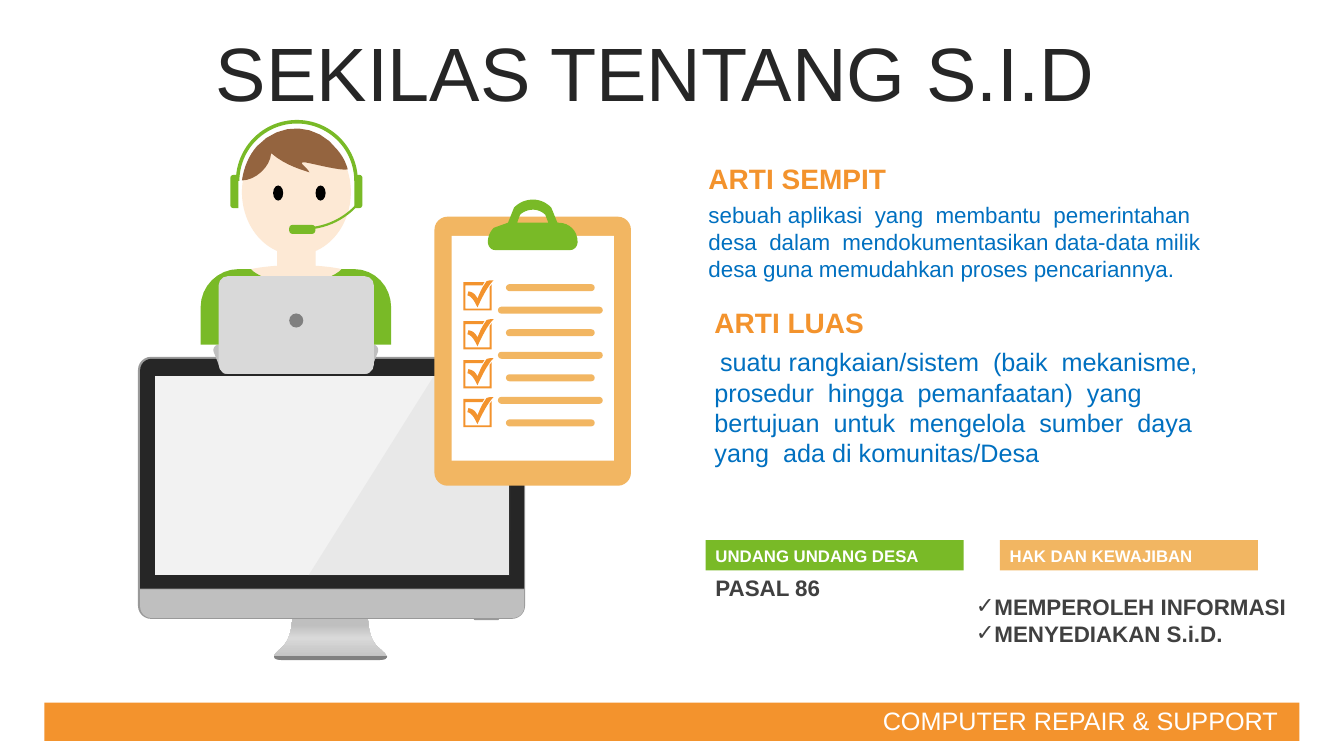
from dataclasses import dataclass

import lxml.etree
import pptx
import pptx.dml.color
import pptx.enum.dml
import pptx.enum.shapes
import pptx.enum.text
import pptx.oxml.ns
import pptx.util

Pt = pptx.util.Pt
qn = pptx.oxml.ns.qn
MSO = pptx.enum.shapes.MSO_SHAPE
ANCHOR = pptx.enum.text.MSO_ANCHOR
FONT = "Arial"
COLORS = {
    "orange": "F3932D", "sand": "F2B662", "green": "79BA27", "white": "FFFFFF",
    "ink": "262626", "text": "404040", "blue": "0070C0", "skin": "FDE9D5",
    "hair": "94643F", "black": "000000", "edge": "999999", "silver": "BFBFBF",
    "light": "D9D9D9", "grey": "808080", "screen": "F2F2F2",
}
Contour = list[tuple[float, ...]]
Box = tuple[float, float, float, float]


@dataclass(frozen=True)
class Preset:
    kind: int
    box: Box
    color: str
    adj: tuple[float, ...] = ()
    rotation: float = 0


@dataclass(frozen=True)
class Outline:
    contours: list[Contour]
    color: str


@dataclass(frozen=True)
class TextBlock:
    text: str
    box: Box
    size: float
    color: str
    bold: bool = False
    anchor: int = ANCHOR.TOP
    spacing: float = 1.0
    before: float = 0
    indent: float = 0


def rgb(name: str) -> pptx.dml.color.RGBColor:
    return pptx.dml.color.RGBColor.from_string(COLORS[name])


def place(sp, box: Box) -> None:
    sp.left, sp.top, sp.width, sp.height = map(Pt, box)


def paint(sp, color: str) -> None:
    sp.shadow.inherit = False
    sp.line.fill.background()
    sp.fill.solid()
    sp.fill.fore_color.rgb = rgb(color)


def style(p, size: float, color: str, bold: bool = False) -> None:
    p.font.name, p.font.size, p.font.bold = FONT, Pt(size), bold
    p.font.color.rgb = rgb(color)
    p.space_before = Pt(0)


def add_preset(s, item: Preset):
    sp = s.shapes.add_shape(item.kind, *map(Pt, item.box))
    for i, value in enumerate(item.adj):
        sp.adjustments[i] = value
    sp.rotation = item.rotation
    paint(sp, item.color)
    return sp


def flatten(contour: Contour, steps: int = 8) -> list[tuple[int, int]]:
    points = [contour[0]]
    for seg in contour[1:]:
        if len(seg) == 2:
            points.append(seg)
            continue
        ctrl = (points[-1], seg[:2], seg[2:4], seg[4:])
        for i in range(1, steps + 1):
            t = i / steps
            weights = ((1 - t) ** 3, 3 * t * (1 - t) ** 2, 3 * t * t * (1 - t), t ** 3)
            points.append(tuple(sum(w * c[k] for w, c in zip(weights, ctrl)) for k in (0, 1)))
    return [(Pt(x), Pt(y)) for x, y in points]


def add_outline(s, item: Outline):
    first, *holes = [flatten(c) for c in item.contours]
    builder = s.shapes.build_freeform(*first[0])
    builder.add_line_segments(first[1:], close=True)
    for hole in holes:
        builder.move_to(*hole[0])
        builder.add_line_segments(hole[1:], close=True)
    sp = builder.convert_to_shape()
    paint(sp, item.color)
    return sp


def draw(s, item: Preset | Outline):
    return add_preset(s, item) if isinstance(item, Preset) else add_outline(s, item)


def add_text(s, item: TextBlock) -> None:
    tf = s.shapes.add_textbox(*map(Pt, item.box)).text_frame
    tf.word_wrap = True
    tf.vertical_anchor = item.anchor
    p = tf.paragraphs[0]
    p.text = item.text
    style(p, item.size, item.color, item.bold)
    p.line_spacing, p.space_before = item.spacing, Pt(item.before)
    if item.indent:
        p._p.get_or_add_pPr().set("indent", str(Pt(item.indent)))


def set_gradient(sp, stops: list[tuple[int, str]], angle: float) -> None:
    sp.fill.gradient()
    sp.fill.gradient_angle = angle
    gs_lst = next(sp._element.iter(qn("a:gsLst")))
    for gs in list(gs_lst):
        gs_lst.remove(gs)
    for pos, color in stops:
        gs = lxml.etree.SubElement(gs_lst, qn("a:gs"), pos=str(pos * 1000))
        lxml.etree.SubElement(gs, qn("a:srgbClr"), val=COLORS[color])


def set_alpha(sp, percent: int) -> None:
    clr = next(sp._element.iter(qn("a:srgbClr")))
    lxml.etree.SubElement(clr, qn("a:alpha"), val=str(percent * 1000))


def fill_placeholder(sp, lines: list[str], box: Box, size: float, color: str, bold: bool):
    place(sp, box)
    tf = sp.text_frame
    tf.text = "\n".join(lines)
    tf.word_wrap = True
    tf.auto_size = pptx.enum.text.MSO_AUTO_SIZE.NONE
    for p in tf.paragraphs:
        style(p, size, color, bold)
    return tf


def shift(contour: Contour, dx: float, dy: float) -> Contour:
    return [tuple(v + (dy if i % 2 else dx) for i, v in enumerate(seg)) for seg in contour]


STAND = Outline([[(268.6, 460.8), (262.8, 454.3, 262.8, 441.4, 262.8, 441.4), (208.8, 441.4),
                  (208.8, 441.4, 208.8, 454.3, 203, 460.8), (197.3, 466.6, 188.6, 471.6, 204.5, 471.6),
                  (267.8, 471.6), (283.7, 471.6, 274.3, 466.6, 268.6, 460.8)]], "silver")
GLARE = Outline([[(310.3, 267.8), (365, 268.6), (364.3, 411.1), (220.3, 411.1)]], "edge")
MONITOR = [
    Preset(MSO.ROUNDED_RECTANGLE, (98.6, 254.9, 276.5, 187.2), "edge", (0.05,)),
    Preset(MSO.ROUND_2_SAME_RECTANGLE, (338.4, 441.4, 18, 1.5), "edge", (0.5, 0), 180),
    Preset(MSO.ROUND_2_SAME_RECTANGLE, (100.1, 256.3, 274.3, 164.2), "ink", (0.05, 0)),
    Outline([[(195.8, 468.7), (195.8, 470.9, 198, 471.6, 204.5, 471.6), (267.8, 471.6),
              (274.3, 471.6, 276.5, 470.9, 276.5, 468.7)]], "grey"),
    Preset(MSO.ROUND_2_SAME_RECTANGLE, (100.1, 421, 274.3, 20.4), "silver", (0.4, 0), 180),
    Preset(MSO.RECTANGLE, (110.9, 268.6, 252.7, 142), "screen"),
]
AGENT = [
    Preset(MSO.OVAL, (172.8, 92.2, 77.8, 90), "skin"),
    Preset(MSO.BLOCK_ARC, (168.5, 85.7, 87.1, 87.1), "green", (108, 0, 0.029)),
    Preset(MSO.ROUND_2_SAME_RECTANGLE, (244.1, 133.9, 23.8, 5.8), "green", (0.404, 0), 90),
    Preset(MSO.ROUND_2_SAME_RECTANGLE, (155.5, 133.9, 23.8, 5.8), "green", (0.404, 0), 270),
    Preset(MSO.BLOCK_ARC, (164.2, 59, 105.1, 105.1), "green", (25.78, 53.31, 0.015)),
    Preset(MSO.ROUNDED_RECTANGLE, (206.6, 160.6, 18.7, 6.5), "green", (0.382,)),
    Outline([[(156.2, 246.2), (266.4, 246.2), (269.3, 246.2, 270.7, 249.1, 270, 251.3),
              (265, 264.2), (264.2, 265.7, 263.5, 267.1, 261.4, 267.1), (161.3, 267.1),
              (159.8, 267.1, 158.4, 265.7, 157.7, 264.2), (152.6, 251.3),
              (151.9, 249.1, 153.4, 246.2, 156.2, 246.2)]], "silver"),
    Preset(MSO.OVAL, (167.8, 189.4, 87.8, 17.3), "skin"),
    Outline([[(170.6, 192.2), (179.3, 192.2), (180.7, 193.7),
              (187.2, 198.7, 198.7, 202.3, 211.7, 202.3), (224.6, 202.3, 236.2, 198.7, 242.6, 193.7),
              (244.1, 192.2), (252.7, 192.2), (267.8, 192.2, 279.4, 204.5, 279.4, 219.6),
              (279.4, 246.2), (143.3, 246.2), (143.3, 219.6),
              (143.3, 204.5, 155.5, 192.2, 170.6, 192.2)]], "green"),
    Preset(MSO.RECTANGLE, (198, 172.1, 27.4, 22.3), "skin"),
    *[Preset(MSO.OVAL, (x, 132.5, 7.2, 10.8), "black") for x in (195.1, 225.4)],
    Outline([[(172.8, 128.9), (174.2, 119.5, 177.8, 110.9, 183.6, 104.4),
              (200.2, 86.4, 226.8, 87.8, 241.2, 107.3), (244.8, 111.6, 247, 115.9, 248.4, 121),
              (244.1, 122.4, 222.5, 116.6, 217.4, 115.9), (212.4, 115.9, 218.9, 118.8, 221, 123.1),
              (217.4, 121.7, 204.5, 118.8, 193.7, 109.4),
              (193, 119.5, 182.2, 128.9, 172.8, 128.9)]], "hair"),
    Preset(MSO.ROUNDED_RECTANGLE, (156.2, 197.3, 110.9, 69.8), "light", (0.095,)),
    Preset(MSO.OVAL, (206.6, 223.9, 10.1, 10.1), "grey"),
]
TICK_BOX = [(0, 1.4), (15.1, 1.4), (13.7, 3.6), (1.4, 3.6), (1.4, 20.2), (18.7, 20.2),
            (18.7, 5), (20.2, 2.9), (20.2, 21.6), (0, 21.6)]
TICK = [(21.6, 0), (17.3, 4.3, 13, 13, 10.1, 19.4), (8.6, 16.6, 6.5, 11.5, 2.9, 10.8), (3.6, 7.9),
        (7.2, 8.6, 8.6, 10.1, 10.1, 13), (12.2, 7.9, 13, 5.8, 16.6, 0.7), (18.7, 0, 19.4, 0, 21.6, 0)]
CLIPBOARD = [
    Preset(MSO.ROUNDED_RECTANGLE, (310.3, 154.8, 140.4, 192.2), "sand", (0.067,)),
    Preset(MSO.RECTANGLE, (322.6, 168.5, 115.9, 160.6), "white"),
    *[Preset(MSO.ROUNDED_RECTANGLE,
             (355.7 if i % 2 else 361.4, 203 + 16.1 * i, 74.9 if i % 2 else 63.4, 5), "sand", (0.5,))
      for i in range(7)],
    Outline([[(380.9, 142.6), (385.9, 142.6, 390.2, 144.7, 393.8, 148.3), (398.2, 159.1), (398.9, 159.1),
              (406.8, 159.1, 412.6, 164.9, 412.6, 172.8), (412.6, 175.7, 410.4, 178.6, 407.5, 178.6),
              (353.5, 178.6), (350.6, 178.6, 348.5, 175.7, 348.5, 172.8),
              (348.5, 169.2, 349.9, 165.6, 352.8, 162.7), (362.9, 159.1), (367.2, 148.3),
              (370.8, 144.7, 375.1, 142.6, 380.9, 142.6)],
             [(380.9, 149.8), (377.3, 149.8, 373.7, 151.2, 371.5, 153.4), (369.4, 159.1),
              (391.7, 159.1), (389.5, 153.4), (387.4, 151.2, 383.8, 149.8, 380.9, 149.8)]], "green"),
    *[Outline([shift(c, 331, 200.2 + 27.8 * i) for c in (TICK_BOX, TICK)], "orange") for i in range(4)],
]
BARS = [
    Preset(MSO.RECTANGLE, (31.7, 501.8, 896.4, 27.4), "orange"),
    Preset(MSO.RECTANGLE, (504, 385.9, 184.3, 21.6), "green"),
    Preset(MSO.RECTANGLE, (714.2, 385.9, 184.3, 21.6), "sand"),
]
TEXTS = [
    TextBlock("COMPUTER REPAIR & SUPPORT", (623.5, 500.4, 304.6, 28.8), 18, "white", anchor=ANCHOR.MIDDLE),
    TextBlock("UNDANG UNDANG DESA", (504, 385.9, 184.3, 21.6), 12, "white", True, ANCHOR.MIDDLE),
    TextBlock("HAK DAN KEWAJIBAN", (714.2, 385.9, 184.3, 21.6), 12, "white", True, ANCHOR.MIDDLE),
    TextBlock("PASAL 86", (504, 406.8, 184.3, 26.6), 16, "text", True),
    TextBlock("ARTI SEMPIT", (499, 112.3, 393.8, 28.1), 20, "orange", True, ANCHOR.MIDDLE, 1.1, 4),
    TextBlock("sebuah aplikasi  yang  membantu  pemerintahan  desa  dalam  mendokumentasikan data-data milik "
              "desa guna memudahkan proses pencariannya.", (499, 140.4, 393.8, 65.5), 16, "blue"),
    TextBlock("ARTI LUAS", (503.3, 215.3, 393.8, 28.1), 20, "orange", True, ANCHOR.MIDDLE, 1.1, 4),
    TextBlock("suatu rangkaian/sistem  (baik  mekanisme,  prosedur  hingga  pemanfaatan)  yang  bertujuan  "
              "untuk  mengelola  sumber  daya  yang  ada di komunitas/Desa",
              (503.3, 244.1, 393.8, 94.3), 18, "blue", indent=4),
]


def main() -> None:
    prs = pptx.Presentation()
    prs.slide_width, prs.slide_height = Pt(960), Pt(540)
    s = prs.slides.add_slide(prs.slide_layouts[1])
    tf = fill_placeholder(s.shapes.title, ["SEKILAS TENTANG S.I.D"], (0, 26.6, 936.7, 56.9), 54, "ink", False)
    tf.vertical_anchor = ANCHOR.MIDDLE
    tf.paragraphs[0].alignment = pptx.enum.text.PP_ALIGN.CENTER
    tf.paragraphs[0].line_spacing, tf.paragraphs[0].space_before = 0.9, Pt(10)
    tf = fill_placeholder(s.placeholders[1], ["MEMPEROLEH INFORMASI", "MENYEDIAKAN S.i.D."],
                          (689.8, 419.8, 252, 46.1), 16, "text", True)
    for p in tf.paragraphs:
        pPr = p._p.get_or_add_pPr()
        pPr.set("marL", str(Pt(13)))
        pPr.set("indent", str(-Pt(13)))
        bullet = lxml.etree.Element(qn("a:buChar"), char="✓")
        pPr.insert_element_before(bullet, "a:tabLst", "a:defRPr", "a:extLst")
    set_gradient(draw(s, STAND), [(0, "silver"), (53, "light"), (83, "silver"), (100, "silver")], 90)
    for item in MONITOR:
        draw(s, item)
    set_alpha(draw(s, GLARE), 10)
    for item in AGENT + CLIPBOARD + BARS:
        draw(s, item)
    for block in TEXTS:
        add_text(s, block)
    prs.save("out.pptx")


if __name__ == "__main__":
    main()
